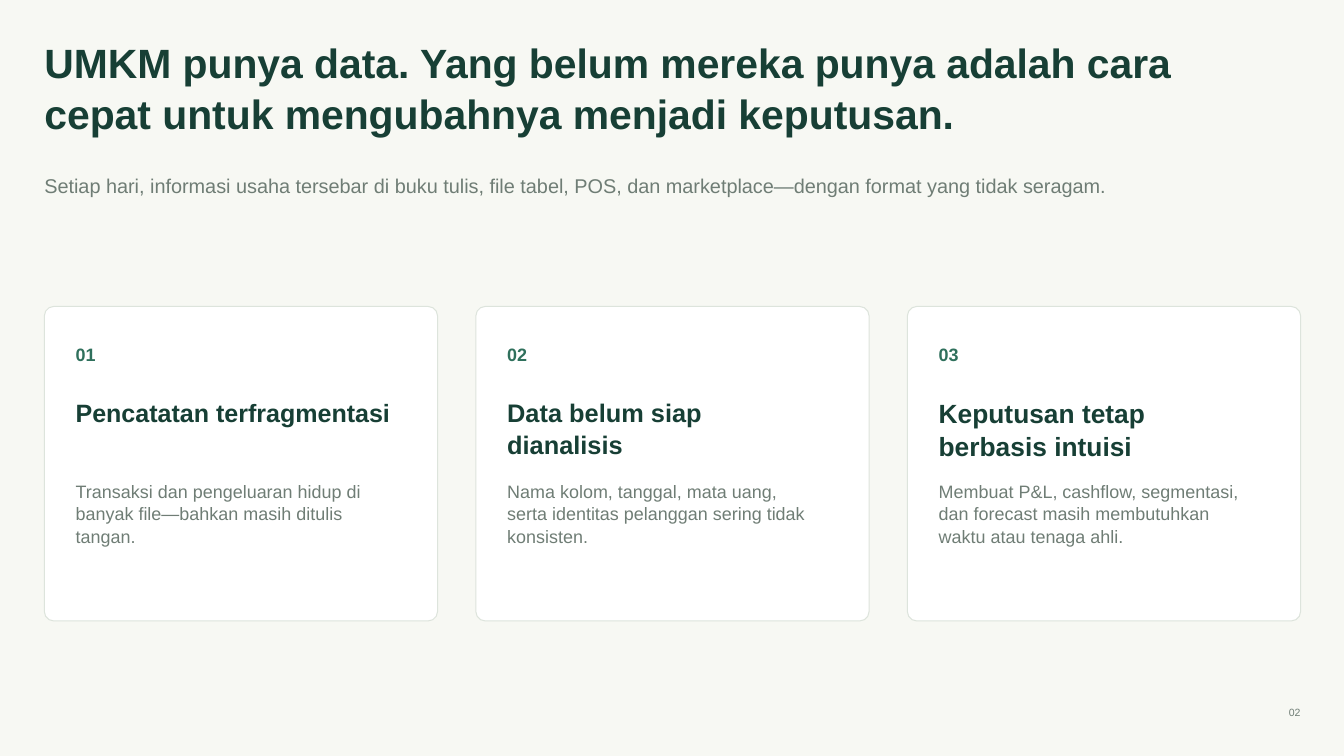
import pptx
import pptx.util
import pptx.dml.color
import pptx.enum.shapes
import pptx.enum.text
from pptx.util import Inches

COLORS = {
    "background": "F7F8F3",
    "heading": "173F35",
    "number": "2F705C",
    "muted": "6F7D75",
    "card": "FFFFFF",
    "border": "DDE4DC",
}


def rgb(name):
    return pptx.dml.color.RGBColor.from_string(COLORS[name])


def write(box, text, size, color, bold=False, align=pptx.enum.text.PP_ALIGN.LEFT):
    frame = box.text_frame
    frame.text = text
    frame.word_wrap = True
    frame.auto_size = pptx.enum.text.MSO_AUTO_SIZE.NONE
    frame.vertical_anchor = pptx.enum.text.MSO_ANCHOR.TOP
    frame.margin_left = frame.margin_right = frame.margin_top = frame.margin_bottom = 0
    paragraph = frame.paragraphs[0]
    paragraph.alignment = align
    paragraph.line_spacing = 1.04
    font = paragraph.runs[0].font
    font.name = "Arial"
    font.size = pptx.util.Pt(size)
    font.bold = bold
    font.color.rgb = rgb(color)


deck = pptx.Presentation()
deck.slide_width = Inches(13.33)
deck.slide_height = Inches(7.5)
slide = deck.slides.add_slide(deck.slide_layouts[5])
slide.background.fill.solid()
slide.background.fill.fore_color.rgb = rgb("background")
shapes = slide.shapes

headline = shapes.title
headline.left, headline.top = Inches(0.44), Inches(0.35)
headline.width, headline.height = Inches(12.19), Inches(1.21)
write(headline, "UMKM punya data. Yang belum mereka punya adalah cara cepat untuk mengubahnya menjadi keputusan.",
      29.2, "heading", bold=True)

summary = shapes.add_textbox(Inches(0.44), Inches(1.71), Inches(11.56), Inches(0.6))
write(summary, "Setiap hari, informasi usaha tersebar di buku tulis, file tabel, POS, dan marketplace—dengan format yang tidak seragam.",
      14.2, "muted")

problems = [
    ("Pencatatan terfragmentasi", 17.9,
     "Transaksi dan pengeluaran hidup di banyak file—bahkan masih ditulis tangan."),
    ("Data belum siap dianalisis", 18.1,
     "Nama kolom, tanggal, mata uang, serta identitas pelanggan sering tidak konsisten."),
    ("Keputusan tetap berbasis intuisi", 18.8,
     "Membuat P&L, cashflow, segmentasi, dan forecast masih membutuhkan waktu atau tenaga ahli."),
]
for index, (problem, problem_size, explanation) in enumerate(problems):
    card_left = 0.44 + index * 4.28
    text_left = Inches(card_left + 0.31)

    card = shapes.add_shape(pptx.enum.shapes.MSO_SHAPE.ROUNDED_RECTANGLE,
                            Inches(card_left), Inches(3.04), Inches(3.9), Inches(3.12))
    card.adjustments[0] = 0.03
    card.shadow.inherit = False
    card.fill.solid()
    card.fill.fore_color.rgb = rgb("card")
    card.line.color.rgb = rgb("border")
    card.line.width = pptx.util.Pt(0.75)

    number = shapes.add_textbox(text_left, Inches(3.4), Inches(0.73), Inches(0.38))
    write(number, f"{index + 1:02d}", 12.8, "number", bold=True)
    problem_title = shapes.add_textbox(text_left, Inches(3.93), Inches(3.12), Inches(0.67))
    write(problem_title, problem, problem_size, "heading", bold=True)
    detail = shapes.add_textbox(text_left, Inches(4.76), Inches(3.12), Inches(0.96))
    write(detail, explanation, 12.8, "muted")

page_number = shapes.add_textbox(Inches(12.19), Inches(7), Inches(0.71), Inches(0.19))
write(page_number, "02", 7.5, "muted", align=pptx.enum.text.PP_ALIGN.RIGHT)

deck.save("out.pptx")
